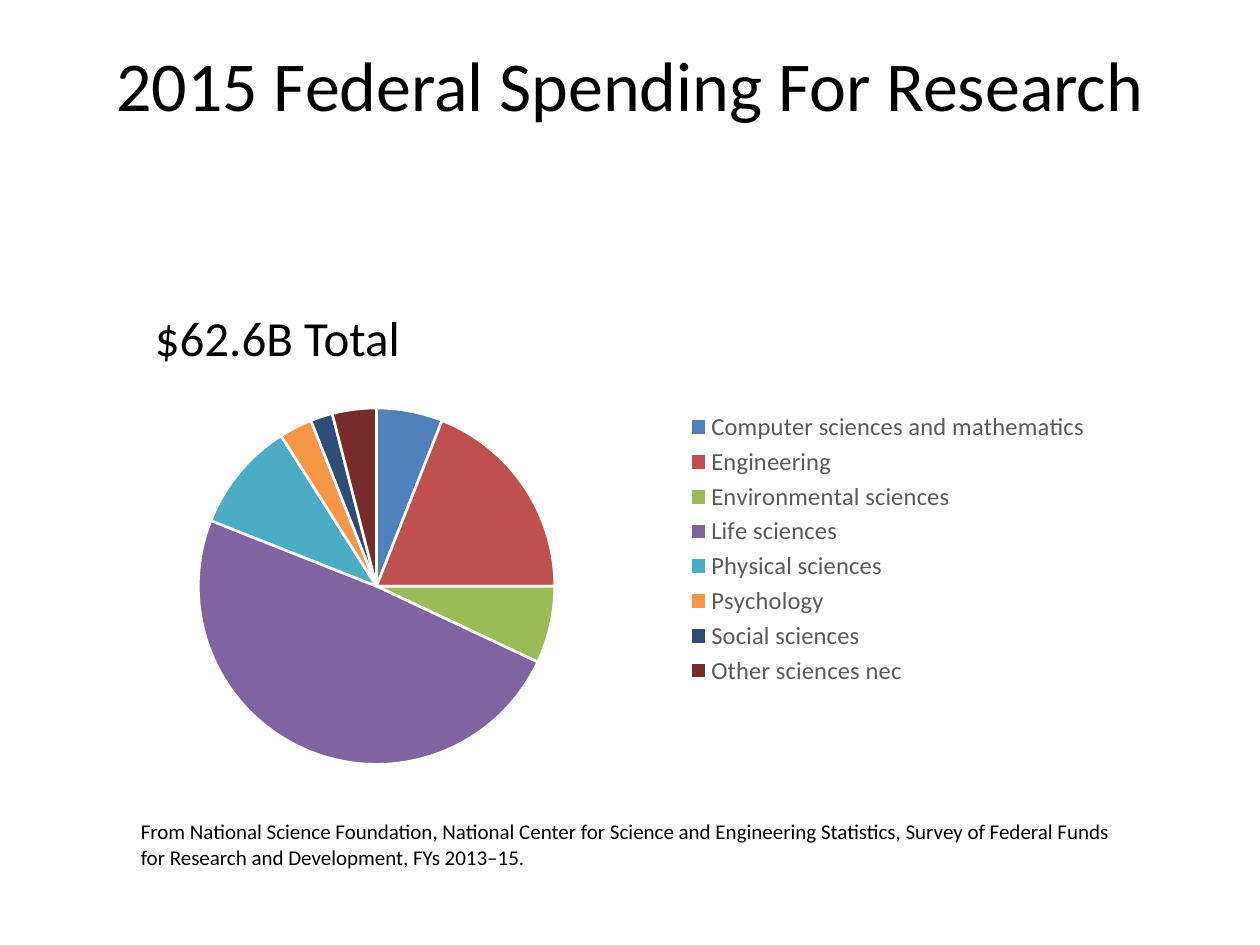
from dataclasses import dataclass

import pptx
import pptx.chart.data
import pptx.dml.color
import pptx.enum.chart
import pptx.enum.text
import pptx.oxml
import pptx.oxml.ns
import pptx.util

Pt = pptx.util.Pt
RGB = pptx.dml.color.RGBColor.from_string


@dataclass(frozen=True)
class Theme:
    font: str = "Calibri"
    ink: str = "000000"
    legend_ink: str = "595959"
    gap: str = "FFFFFF"
    title_size: int = 40
    total_size: int = 28
    legend_size: int = 14
    source_size: int = 12
    chart_size: int = 10


THEME = Theme()

# Field of research, share in percent, slice colour
SPENDING = [
    ("Computer sciences and mathematics", 6, "4F81BD"),
    ("Engineering", 19, "C0504D"),
    ("Environmental sciences", 7, "9BBB59"),
    ("Life sciences", 49, "8064A2"),
    ("Physical sciences", 10, "4BACC6"),
    ("Psychology", 3, "F79646"),
    ("Social sciences", 2, "2C4D75"),
    ("Other sciences nec", 4, "772C2A"),
]


def style_font(font, size, colour):
    font.name = THEME.font
    font.size = Pt(size)
    font.color.rgb = RGB(colour)


def add_text(slide, text, box, size, align=pptx.enum.text.PP_ALIGN.LEFT,
             anchor=pptx.enum.text.MSO_ANCHOR.TOP):
    frame = slide.shapes.add_textbox(*map(Pt, box)).text_frame
    frame.word_wrap = True
    frame.vertical_anchor = anchor
    paragraph = frame.paragraphs[0]
    paragraph.text = text
    paragraph.alignment = align
    style_font(paragraph.font, size, THEME.ink)


def place_part(parent, index, x, y, w, h, inner=False):
    """Fix a chart part at fractions of the chart area."""
    qn = pptx.oxml.ns.qn
    for old in parent.findall(qn("c:layout")):
        parent.remove(old)
    target = '<c:layoutTarget val="inner"/>' if inner else ""
    modes = '<c:xMode val="edge"/><c:yMode val="edge"/>'
    sizes = "".join(f'<c:{key} val="{value}"/>'
                    for key, value in zip("xywh", (x, y, w, h)))
    parent.insert(index, pptx.oxml.parse_xml(
        f'<c:layout {pptx.oxml.ns.nsdecls("c")}><c:manualLayout>'
        f"{target}{modes}{sizes}</c:manualLayout></c:layout>"))


def add_spending_pie(slide, box):
    fields, shares, colours = zip(*SPENDING)
    spending = pptx.chart.data.CategoryChartData()
    spending.categories = fields
    spending.add_series("Series 1", shares)
    pie = slide.shapes.add_chart(
        pptx.enum.chart.XL_CHART_TYPE.PIE, *map(Pt, box), spending).chart
    pie.has_title = False
    style_font(pie.font, THEME.chart_size, THEME.ink)

    # Slices
    plot = pie.plots[0]
    plot.vary_by_categories = True
    for i, colour in enumerate(colours):
        slice_format = plot.series[0].points[i].format
        slice_format.fill.solid()
        slice_format.fill.fore_color.rgb = RGB(colour)
        slice_format.line.color.rgb = RGB(THEME.gap)
        slice_format.line.width = Pt(1.5)

    # Legend, to the right of the pie
    pie.has_legend = True
    legend = pie.legend
    legend.position = pptx.enum.chart.XL_LEGEND_POSITION.BOTTOM
    legend.include_in_layout = False
    style_font(legend.font, THEME.legend_size, THEME.legend_ink)

    chart_part = pie.element.chart
    place_part(chart_part.plotArea, 0, 0.115, 0.081, 0.318, 0.718, inner=True)
    place_part(chart_part.find(pptx.oxml.ns.qn("c:legend")), 1,
               0.53, 0.08, 0.4, 0.57)


def main():
    deck = pptx.Presentation()
    deck.slide_width, deck.slide_height = Pt(720), Pt(540)
    slide = deck.slides.add_slide(deck.slide_layouts[6])

    # Total and heading
    add_text(slide, "$62.6B Total", (81.4, 172.1, 164.2, 43.2),
             THEME.total_size)
    add_text(slide, "2015 Federal Spending For Research",
             (49.7, -4.3, 620.6, 104.4), THEME.title_size,
             pptx.enum.text.PP_ALIGN.CENTER, pptx.enum.text.MSO_ANCHOR.MIDDLE)

    # Source
    add_text(slide, "From National Science Foundation, National Center for "
             "Science and Engineering Statistics, Survey of Federal Funds for "
             "Research and Development, FYs 2013–15.",
             (73.4, 464.4, 573.8, 36), THEME.source_size)

    # Shares by field
    add_spending_pie(slide, (39.6, 210.2, 640.8, 283.7))
    deck.save("out.pptx")


if __name__ == "__main__":
    main()
